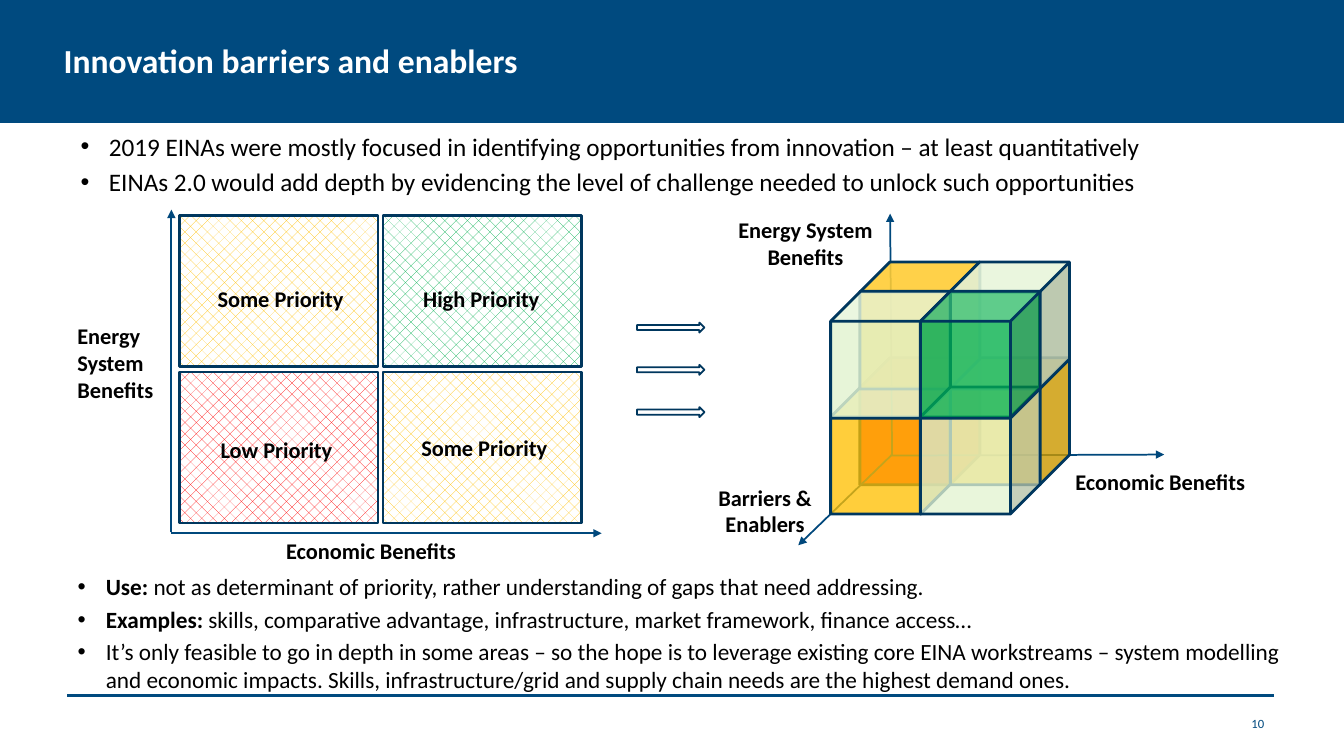
from lxml.etree import SubElement
from pptx import Presentation
from pptx.dml.color import RGBColor
from pptx.enum.dml import MSO_PATTERN
from pptx.enum.shapes import MSO_CONNECTOR, MSO_SHAPE
from pptx.enum.text import MSO_ANCHOR, MSO_AUTO_SIZE, PP_ALIGN
from pptx.oxml.ns import qn
from pptx.util import Pt

FONT = "Calibri"
BLACK = RGBColor(0x00, 0x00, 0x00)
WHITE = RGBColor(0xFF, 0xFF, 0xFF)
BLUE = RGBColor(0x00, 0x4A, 0x7F)
AXIS_BLUE = RGBColor(0x00, 0x48, 0x7C)
NAVY = RGBColor(0x00, 0x37, 0x5E)
RED = RGBColor(0xFF, 0x00, 0x00)
AMBER = RGBColor(0xFF, 0xC0, 0x00)
GREEN = RGBColor(0x00, 0xB0, 0x50)
PALE_GREEN = RGBColor(0xE3, 0xF4, 0xD1)

TOP_POINTS = [
    [("2019 EINAs were mostly focused in identifying opportunities from innovation "
      "– at least quantitatively", False)],
    [("EINAs 2.0 would add depth by evidencing the level of challenge needed to unlock "
      "such opportunities", False)],
]
BOTTOM_POINTS = [
    [("Use: ", True),
     ("not as determinant of priority, rather understanding of gaps that need addressing.", False)],
    [("Examples: ", True),
     ("skills, comparative advantage, infrastructure, market framework, finance access…", False)],
    [("It’s only feasible to go in depth in some areas – so the hope is to leverage existing "
      "core EINA workstreams – system modelling and economic impacts. Skills, "
      "infrastructure/grid and supply chain needs are the highest demand ones.", False)],
]

# Column, row, colour; then the label with its left and top
QUADRANTS = [
    (0, 1, RED, "Low Priority", 150.5, 308.2),
    (1, 0, GREEN, "High Priority", 295.2, 200.2),
    (0, 0, AMBER, "Some Priority", 148.3, 200.2),
    (1, 1, AMBER, "Some Priority", 293.8, 306.7),
]
# Column, row, depth (1 is the rear layer), colour, opacity in percent
REAR_CORNER = (0, 1, 1, RED, 80)
CUBES = [
    (1, 1, 1, AMBER, 81),
    (0, 1, 0, AMBER, 77),
    (0, 0, 1, AMBER, 89),
    (1, 0, 1, PALE_GREEN, 89),
    (0, 0, 0, PALE_GREEN, 83),
    (1, 1, 0, PALE_GREEN, 77),
    (1, 0, 0, GREEN, 75),
]


def place(shape, left, top, width, height):
    shape.left, shape.top = Pt(left), Pt(top)
    shape.width, shape.height = Pt(width), Pt(height)


def style_span(span, size, color, bold):
    span.font.name = FONT
    span.font.size = Pt(size)
    span.font.bold = bold
    span.font.color.rgb = color


def add_line(slide, start, end, color, width, arrow=False):
    line = slide.shapes.add_connector(MSO_CONNECTOR.STRAIGHT, *map(Pt, start + end))
    line.line.color.rgb = color
    line.line.width = Pt(width)
    if arrow:
        SubElement(line.line._get_or_add_ln(), qn("a:tailEnd"), type="triangle")
    SubElement(line._element.spPr, qn("a:effectLst"))


def add_label(slide, text, left, top, width, height, align=PP_ALIGN.LEFT,
              size=16, color=BLACK, bold=True):
    box = slide.shapes.add_textbox(Pt(left), Pt(top), Pt(width), Pt(height))
    frame = box.text_frame
    frame.word_wrap = True
    frame.text = text
    para = frame.paragraphs[0]
    para.alignment = align
    style_span(para.runs[0], size, color, bold)
    return box


def add_outlined(slide, preset, left, top, width, height, line_width):
    shape = slide.shapes.add_shape(preset, Pt(left), Pt(top), Pt(width), Pt(height))
    shape.shadow.inherit = False
    shape.fill.background()
    shape.line.color.rgb = NAVY
    shape.line.width = Pt(line_width)
    return shape


def fill_title(title, text):
    place(title, 0, -2.2, 960, 90)
    title.fill.solid()
    title.fill.fore_color.rgb = BLUE
    frame = title.text_frame
    frame.text = text
    frame.auto_size = MSO_AUTO_SIZE.NONE
    frame.vertical_anchor = MSO_ANCHOR.MIDDLE
    frame.margin_left = frame.margin_right = Pt(45.4)
    para = frame.paragraphs[0]
    para.alignment = PP_ALIGN.LEFT
    style_span(para.runs[0], 24, WHITE, True)


def fill_list(body, points, size):
    """Write each point, a list of (text, bold) spans, as a bulleted paragraph."""
    frame = body.text_frame
    frame.auto_size = MSO_AUTO_SIZE.NONE
    for number, spans in enumerate(points):
        para = frame.paragraphs[0] if number == 0 else frame.add_paragraph()
        properties = para._p.get_or_add_pPr()
        properties.set("marL", str(Pt(20.2)))
        properties.set("indent", str(Pt(-20.2)))
        para.space_before = Pt(round(size * 0.2, 1))
        SubElement(properties, qn("a:buChar"), char="•")
        for text, bold in spans:
            span = para.add_run()
            span.text = text
            style_span(span, size, BLACK, bold)


def add_quadrant(slide, column, row, color):
    quadrant = add_outlined(slide, MSO_SHAPE.RECTANGLE, 128.2 + 145.4 * column,
                            153.7 + 112 * row, 141.8, 108, 2)
    quadrant.fill.patterned()
    quadrant.fill.pattern = MSO_PATTERN.PERCENT_25
    quadrant.fill.fore_color.rgb = color
    quadrant.fill.back_color.rgb = WHITE


def add_cube(slide, column, row, depth, color, opacity):
    cube = add_outlined(slide, MSO_SHAPE.CUBE, 593.3 + 64.1 * column + 20.9 * depth,
                        208.1 + 68.4 * row - 20.9 * depth, 85.7, 90.7, 2)
    cube.fill.solid()
    cube.fill.fore_color.rgb = color
    swatch = cube._element.spPr.find(qn("a:solidFill")).find(qn("a:srgbClr"))
    SubElement(swatch, qn("a:alpha"), val=str(opacity * 1000))


def add_matrix(slide):
    add_line(slide, (122.4, 380.9), (429.8, 380.9), AXIS_BLUE, 1.25, arrow=True)
    add_line(slide, (122.4, 380.2), (122.4, 149.8), AXIS_BLUE, 1.25, arrow=True)
    add_label(slide, "Economic Benefits", 197.3, 380.2, 154.8, 26.6)
    add_label(slide, "Energy System Benefits", 48.2, 226.8, 107.3, 65.5)
    for column, row, color, label, left, top in QUADRANTS:
        add_quadrant(slide, column, row, color)
        add_label(slide, label, left, top, 108.7, 26.6)


def add_cube_diagram(slide):
    add_cube(slide, *REAR_CORNER)
    add_line(slide, (635.8, 325.4), (831.6, 324.7), AXIS_BLUE, 1.25, arrow=True)
    add_line(slide, (636.5, 325.4), (570.2, 389.5), AXIS_BLUE, 1.25, arrow=True)
    add_line(slide, (637.2, 325.4), (635.8, 152.6), AXIS_BLUE, 1.25, arrow=True)
    add_label(slide, "Economic Benefits", 761, 331.2, 154.8, 26.6)
    add_label(slide, "Energy System Benefits", 507.6, 151.2, 135.4, 46.1, PP_ALIGN.CENTER)
    add_label(slide, "Barriers & Enablers", 496.1, 342, 100.8, 46.1, PP_ALIGN.CENTER)
    for cube in CUBES:
        add_cube(slide, *cube)


def main():
    deck = Presentation()
    deck.slide_width, deck.slide_height = Pt(960), Pt(540)
    slide = deck.slides.add_slide(deck.slide_layouts.get_by_name("Two Content"))
    title, top_list, bottom_list = slide.placeholders

    add_line(slide, (48.2, 496.8), (910, 496.8), BLUE, 2.25)
    fill_title(title, "Innovation barriers and enablers")
    place(top_list, 50.4, 90, 870.5, 62.6)
    fill_list(top_list, TOP_POINTS, 18)
    add_matrix(slide)
    add_cube_diagram(slide)
    for step in range(3):
        add_outlined(slide, MSO_SHAPE.RIGHT_ARROW, 455, 230.4 + 30.2 * step, 48.2, 7.2, 1.25)
    place(bottom_list, 48.2, 405.4, 877, 83.5)
    fill_list(bottom_list, BOTTOM_POINTS, 16.6)
    number = add_label(slide, "10", 686.2, 502.6, 223.9, 28.8, PP_ALIGN.RIGHT, 9, BLUE, False)
    number.text_frame.vertical_anchor = MSO_ANCHOR.MIDDLE

    deck.save("out.pptx")


if __name__ == "__main__":
    main()
